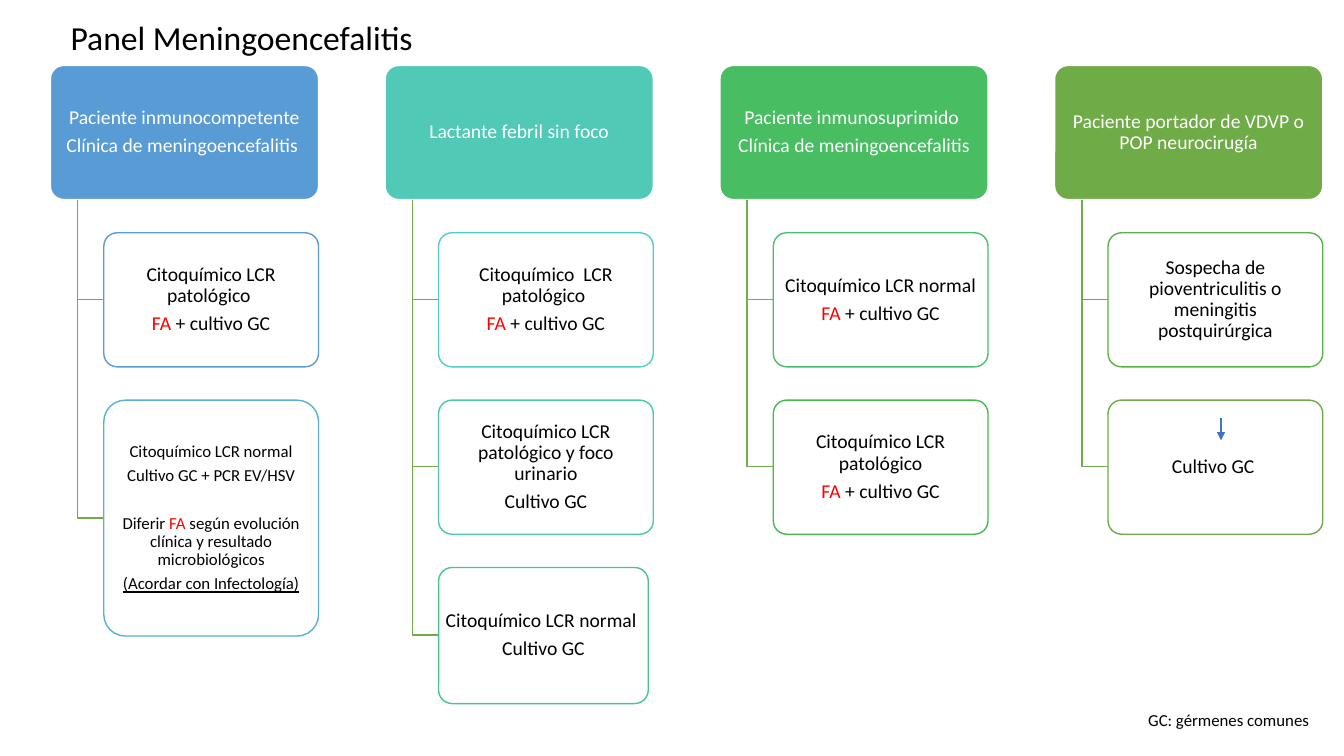
from dataclasses import dataclass

from lxml.etree import SubElement
from pptx import Presentation
from pptx.dml.color import RGBColor
from pptx.enum.shapes import MSO_CONNECTOR as Connector, MSO_SHAPE as Shape
from pptx.enum.text import MSO_ANCHOR as Anchor, MSO_AUTO_SIZE as AutoSize, PP_ALIGN as Align
from pptx.oxml.ns import qn
from pptx.util import Emu, Pt

PX = 9144
TITLE_ONLY = 5


@dataclass(frozen=True)
class Theme:
    """Colours, font and type sizes of the slide."""
    font: str = "Calibri"
    ink: str = "000000"
    paper: str = "FFFFFF"
    alert: str = "FF0000"
    branch: str = "70AD47"
    arrow: str = "4472C4"
    title: int = 24
    body: int = 14
    small: int = 12
    line_spacing: float = 0.9
    gap_ratio: float = 0.35
    card_alpha: int = 89000


@dataclass(frozen=True)
class Line:
    """One paragraph of a box."""
    text: str
    underline: bool = False
    before: float | None = None


@dataclass(frozen=True)
class Card:
    """One outlined box hanging from a column head."""
    color: str
    lines: tuple
    size: int = 14
    width: int = 213
    height: int = 133


@dataclass(frozen=True)
class Column:
    """A patient group and its cards."""
    color: str
    head: tuple
    cards: tuple


THEME = Theme()
ALERT_WORD = "FA"
LEFT, COLUMN_STEP = 50, 332
HEAD_TOP, HEAD_WIDTH, HEAD_HEIGHT = 65, 266, 133
STEM_INDENT, CARD_INDENT = 27, 53
CARD_TOP, CARD_STEP = 231, 166

FA_CULTURE = Line("FA + cultivo GC")
CULTURE = Line("Cultivo GC")
COLUMNS = (
    Column("599BD5", (Line("Paciente inmunocompetente"), Line("Clínica de meningoencefalitis ")), (
        Card("599BD5", (Line("Citoquímico LCR patológico "), FA_CULTURE)),
        Card("56B2D0", (
            Line("Citoquímico LCR normal"),
            Line("Cultivo GC + PCR EV/HSV"),
            Line("Diferir FA según evolución clínica y resultado microbiológicos", before=21.6),
            Line("(Acordar con Infectología)", underline=True),
        ), size=THEME.small, height=234),
    )),
    Column("50C9B6", (Line("Lactante febril sin foco"),), (
        Card("52CBCC", (Line("Citoquímico  LCR patológico "), FA_CULTURE)),
        Card("4EC8AC", (Line("Citoquímico LCR patológico y foco urinario"), CULTURE)),
        Card("4CC38C", (Line("Citoquímico LCR normal "), CULTURE), width=208, height=135),
    )),
    Column("48BD62", (Line("Paciente inmunosuprimido "), Line("Clínica de meningoencefalitis")), (
        Card("49BF6C", (Line("Citoquímico LCR normal"), FA_CULTURE)),
        Card("46BA4E", (Line("Citoquímico LCR patológico"), FA_CULTURE)),
    )),
    Column("6FAB46", (Line("Paciente portador de VDVP o POP neurocirugía"),), (
        Card("58B345", (Line("Sospecha de pioventriculitis o meningitis postquirúrgica"),)),
        Card("6FAB46", (Line("Cultivo GC "),)),
    )),
)


def px(*values):
    """Turn pixel lengths into EMU."""
    return [Emu(value * PX) for value in values]


def rgb(color):
    """Turn a hex string into a colour."""
    return RGBColor.from_string(color)


def style_font(font, size, color):
    """Apply the theme font with a size and a colour."""
    font.name, font.size = THEME.font, Pt(size)
    font.color.rgb = rgb(color)


def write_line(paragraph, line, size, color):
    """Write a paragraph, colouring the alert word within it."""
    before, alert, after = line.text.partition(ALERT_WORD)
    for text in filter(None, (before, alert, after)):
        run = paragraph.add_run()
        run.text = text
        style_font(run.font, size, THEME.alert if text == ALERT_WORD else color)
        if line.underline:
            run.font.underline = True


def write_lines(text_frame, lines, size, color):
    """Fill a box with centred paragraphs."""
    text_frame.word_wrap = True
    text_frame.vertical_anchor = Anchor.MIDDLE
    text_frame.margin_left, text_frame.margin_right = px(3, 3)
    text_frame.margin_top, text_frame.margin_bottom = px(2, 2)
    for index, line in enumerate(lines):
        paragraph = text_frame.add_paragraph() if index else text_frame.paragraphs[0]
        paragraph.alignment = Align.CENTER
        paragraph.line_spacing = THEME.line_spacing
        if index:
            paragraph.space_before = Pt(line.before or round(size * THEME.gap_ratio, 1))
        write_line(paragraph, line, size, color)


def add_box(slide, bounds, fill, outline, lines, size, color):
    """Add a rounded box with text."""
    shape = slide.shapes.add_shape(Shape.ROUNDED_RECTANGLE, *px(*bounds))
    shape.adjustments[0] = 0.1
    shape.shadow.inherit = False
    shape.fill.solid()
    shape.fill.fore_color.rgb = rgb(fill)
    shape.line.color.rgb = rgb(outline)
    shape.line.width = Pt(1)
    write_lines(shape.text_frame, lines, size, color)
    return shape


def add_branch(slide, left, bottom, right):
    """Add an elbow from a column head to a card."""
    builder = slide.shapes.build_freeform(left, HEAD_TOP + HEAD_HEIGHT, scale=PX)
    builder.add_line_segments([(left, bottom), (right, bottom)], close=False)
    shape = builder.convert_to_shape()
    shape.shadow.inherit = False
    shape.fill.background()
    shape.line.color.rgb = rgb(THEME.branch)
    shape.line.width = Pt(1)


def add_card(slide, column_left, top, card):
    """Add a card and the branch that leads to it."""
    left = column_left + CARD_INDENT
    add_branch(slide, column_left + STEM_INDENT, top + card.height // 2, left)
    shape = add_box(slide, (left, top, card.width, card.height), THEME.paper, card.color,
                    card.lines, card.size, THEME.ink)
    fill_color = shape._element.spPr.find(qn("a:solidFill"))[0]
    SubElement(fill_color, qn("a:alpha"), val=str(THEME.card_alpha))


def add_column(slide, left, column):
    """Add a column head with its cards."""
    add_box(slide, (left, HEAD_TOP, HEAD_WIDTH, HEAD_HEIGHT), column.color, THEME.paper,
            column.head, THEME.body, THEME.paper)
    for row, card in enumerate(column.cards):
        add_card(slide, left, CARD_TOP + row * CARD_STEP, card)


def add_title(slide, text):
    """Place and format the title placeholder."""
    title = slide.shapes.title
    title.left, title.top, title.width, title.height = px(60, 16, 1181, 47)
    title.text_frame.text = text
    title.text_frame.auto_size = AutoSize.NONE
    title.text_frame.vertical_anchor = Anchor.MIDDLE
    paragraph = title.text_frame.paragraphs[0]
    paragraph.alignment = Align.LEFT
    paragraph.line_spacing = THEME.line_spacing
    style_font(paragraph.runs[0].font, THEME.title, THEME.ink)


def add_footnote(slide, text):
    """Add the abbreviation note."""
    text_frame = slide.shapes.add_textbox(*px(1129, 699, 204, 50)).text_frame
    text_frame.word_wrap = True
    text_frame.text = text
    style_font(text_frame.paragraphs[0].runs[0].font, THEME.small, THEME.ink)


def add_arrow(slide, start, end):
    """Add a straight arrow."""
    arrow = slide.shapes.add_connector(Connector.STRAIGHT, *px(*start, *end))
    arrow.line.color.rgb = rgb(THEME.arrow)
    arrow.line.width = Pt(0.75)
    SubElement(arrow.line._get_or_add_ln(), qn("a:tailEnd"), type="triangle")
    SubElement(arrow._element.spPr, qn("a:effectLst"))


def main():
    """Build and save the slide."""
    presentation = Presentation()
    presentation.slide_width, presentation.slide_height = px(1333, 750)
    slide = presentation.slides.add_slide(presentation.slide_layouts[TITLE_ONLY])
    add_title(slide, "Panel Meningoencefalitis")
    for index, column in enumerate(COLUMNS):
        add_column(slide, LEFT + index * COLUMN_STEP, column)
    add_footnote(slide, "GC: gérmenes comunes")
    add_arrow(slide, (1211, 415), (1211, 437))
    presentation.save("out.pptx")


if __name__ == "__main__":
    main()
